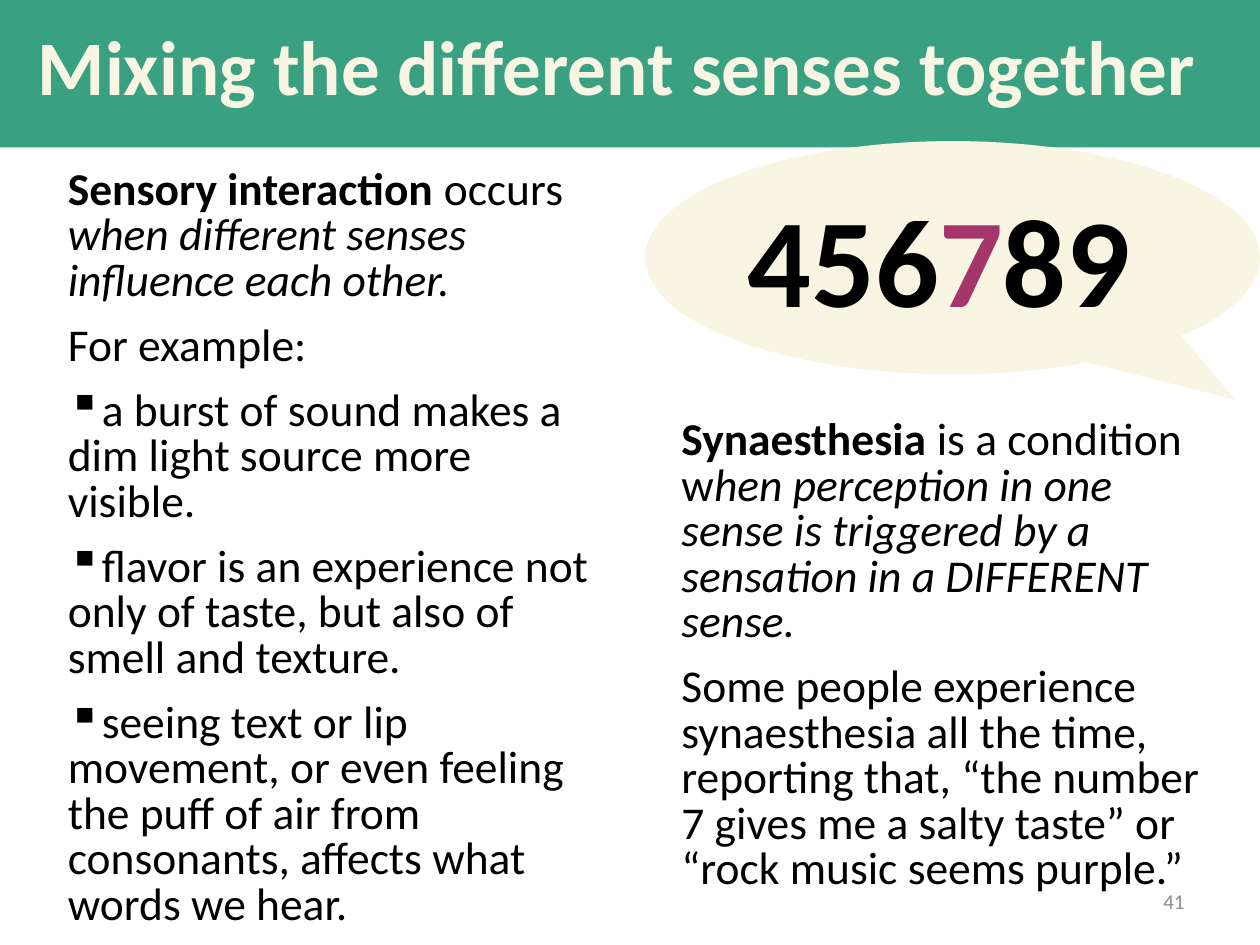
from dataclasses import dataclass

from lxml import etree
from pptx import Presentation
from pptx.dml.color import RGBColor
from pptx.enum.shapes import MSO_SHAPE
from pptx.enum.text import MSO_ANCHOR, PP_ALIGN
from pptx.oxml.ns import qn
from pptx.util import Inches, Pt

RECTANGLE = MSO_SHAPE.RECTANGLE
CALLOUT = MSO_SHAPE.OVAL_CALLOUT
TOP, MIDDLE = MSO_ANCHOR.TOP, MSO_ANCHOR.MIDDLE
LEFT, RIGHT = PP_ALIGN.LEFT, PP_ALIGN.RIGHT


@dataclass(frozen=True)
class Theme:
    font: str = "Calibri"
    green: RGBColor = RGBColor(0x3A, 0xA0, 0x82)
    cream: RGBColor = RGBColor(0xF8, 0xF6, 0xE3)
    black: RGBColor = RGBColor(0, 0, 0)
    purple: RGBColor = RGBColor(0xA5, 0x36, 0x6C)
    gray: RGBColor = RGBColor(0x8C, 0x8C, 0x8C)
    title_size: Pt = Pt(44)
    body_size: Pt = Pt(26)
    digits_size: Pt = Pt(72)
    number_size: Pt = Pt(12)


THEME = Theme()

# Runs are (text, style), where style is "", "bold" or "italic"
INTERACTION = [
    [("Sensory interaction ", "bold"), ("occurs ", ""),
     ("when different senses influence each other.", "italic")],
    [("For example:", "")],
]
EXAMPLES = [
    "a burst of sound makes a dim light source more visible.",
    "flavor is an experience not only of taste, but also of smell and texture.",
    "seeing text or lip movement, or even feeling the puff of air from "
    "consonants, affects what words we hear.",
]
SYNAESTHESIA = [
    [("Synaesthesia ", "bold"), ("is a condition w", ""),
     ("hen perception in one sense is triggered by a sensation in a "
      "DIFFERENT sense.", "italic")],
    [("Some people experience synaesthesia all the time, reporting that, "
      "“the number 7 gives me a salty taste” or “rock music seems purple.”", "")],
]


def set_font(paragraph, size, color, bold=False):
    font = paragraph.font
    font.name, font.size, font.bold = THEME.font, size, bold
    font.color.rgb = color


def add_bullet(paragraph):
    properties = paragraph._p.get_or_add_pPr()
    color = etree.SubElement(properties, qn("a:buClr"))
    etree.SubElement(color, qn("a:srgbClr"), val=str(THEME.black))
    etree.SubElement(properties, qn("a:buChar"), char="▪")


def add_filled_shape(slide, kind, bounds, fill, anchor):
    shape = slide.shapes.add_shape(kind, *map(Inches, bounds))
    shape.shadow.inherit = False
    shape.fill.solid()
    shape.fill.fore_color.rgb = fill
    shape.line.fill.background()
    shape.text_frame.vertical_anchor = anchor
    shape.text_frame.paragraphs[0].alignment = LEFT
    return shape


def add_text_box(slide, bounds):
    text_frame = slide.shapes.add_textbox(*map(Inches, bounds)).text_frame
    text_frame.word_wrap = True
    return text_frame


def add_title(slide, text):
    banner = add_filled_shape(slide, RECTANGLE, (0, 0, 10, 1.17), THEME.green, MIDDLE)
    banner.text_frame.margin_left = Inches(0.3)
    paragraph = banner.text_frame.paragraphs[0]
    paragraph.text = text
    paragraph.line_spacing = Pt(42)
    set_font(paragraph, THEME.title_size, THEME.cream, bold=True)


def add_body(slide, bounds, paragraphs, bullets=()):
    text_frame = add_text_box(slide, bounds)
    items = [(runs, False) for runs in paragraphs]
    items += [([(text, "")], True) for text in bullets]
    for index, (runs, bulleted) in enumerate(items):
        paragraph = text_frame.add_paragraph() if index else text_frame.paragraphs[0]
        paragraph.line_spacing = Pt(26)
        paragraph.space_before = Pt(5.2 if index else 0)
        paragraph.space_after = Pt(6)
        if bulleted:
            add_bullet(paragraph)
        set_font(paragraph, THEME.body_size, THEME.black)
        for text, style in runs:
            run = paragraph.add_run()
            run.text = text
            if style:
                setattr(run.font, style, True)


def add_digits_callout(slide):
    callout = add_filled_shape(slide, CALLOUT, (5.12, 1.12, 4.88, 1.85), THEME.cream, TOP)
    callout.adjustments[0], callout.adjustments[1] = 0.46, 0.61
    paragraph = callout.text_frame.paragraphs[0]
    set_font(paragraph, THEME.digits_size, THEME.black, bold=True)
    for digits, color in (("456", THEME.black), ("7", THEME.purple), ("89", THEME.black)):
        run = paragraph.add_run()
        run.text = digits
        run.font.color.rgb = color


def add_slide_number(slide, number):
    text_frame = add_text_box(slide, (7.17, 6.95, 2.33, 0.4))
    text_frame.vertical_anchor = MIDDLE
    paragraph = text_frame.paragraphs[0]
    paragraph.text = number
    paragraph.alignment = RIGHT
    set_font(paragraph, THEME.number_size, THEME.gray)


def main():
    presentation = Presentation()
    presentation.slide_width, presentation.slide_height = Inches(10), Inches(7.5)
    slide = presentation.slides.add_slide(presentation.slide_layouts[6])

    add_title(slide, "Mixing the different senses together")
    # Left column
    add_body(slide, (0.44, 1.29, 4.47, 3.19), INTERACTION, EXAMPLES)
    # Right column
    add_digits_callout(slide)
    add_body(slide, (5.31, 3.28, 4.51, 3.92), SYNAESTHESIA)
    add_slide_number(slide, "41")

    presentation.save("out.pptx")


if __name__ == "__main__":
    main()
